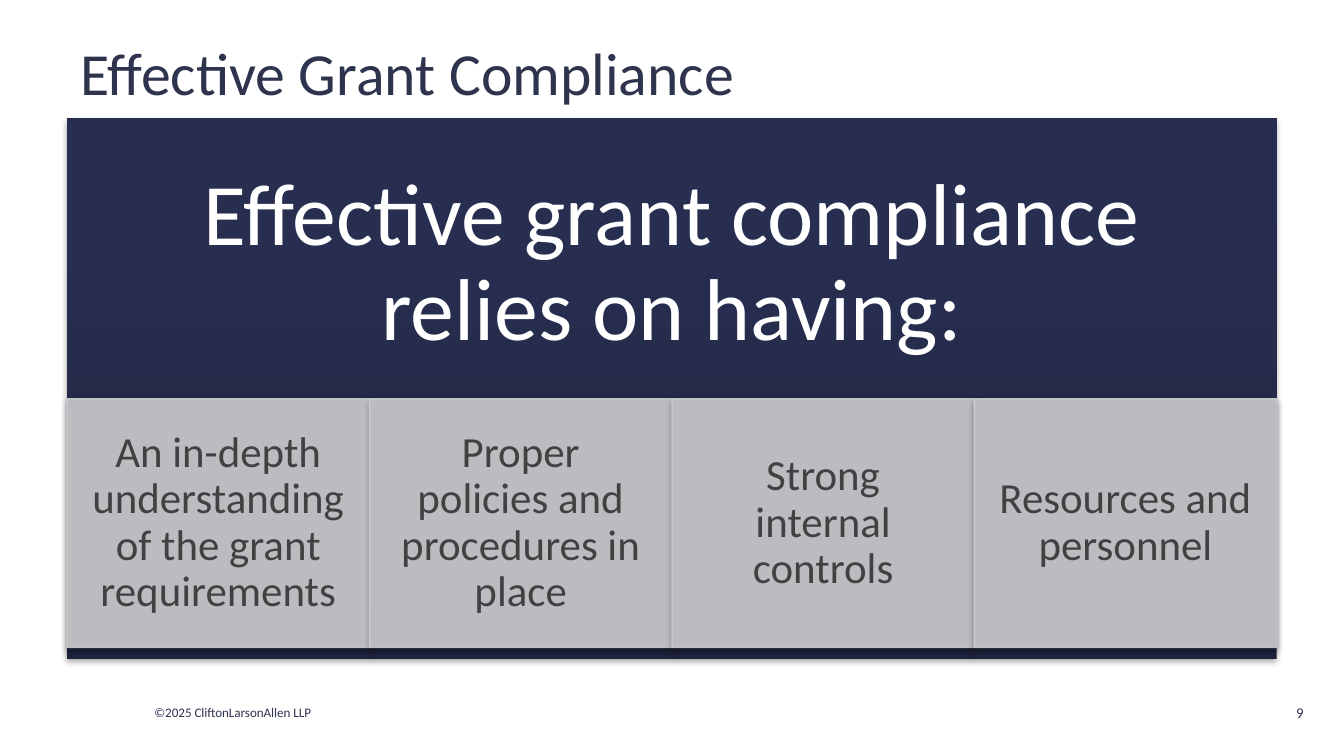
from dataclasses import dataclass
from typing import Optional

from lxml.etree import SubElement
from pptx import Presentation
from pptx.dml.color import RGBColor
from pptx.enum.shapes import MSO_SHAPE
from pptx.enum.text import MSO_ANCHOR, PP_ALIGN
from pptx.oxml.ns import qn
from pptx.util import Cm, Pt


@dataclass(frozen=True)
class Theme:
    font: str = "Calibri"
    navy: str = "2E334E"
    white: str = "FFFFFF"
    dark: str = "414142"
    tile: str = "CDCED0"
    shadow: str = "000000"
    panel_stops: tuple = ((0, "1F243E"), (80, "282E50"), (100, "272E51"))
    tile_alpha: int = 90
    shadow_alpha: int = 35
    title: int = 32
    heading: int = 47
    body: int = 23
    footer: int = 7
    number: int = 8


@dataclass(frozen=True)
class Box:
    left: float
    top: float
    width: float
    height: float

    def emu(self) -> tuple:
        return tuple(Cm(v) for v in (self.left, self.top, self.width, self.height))


@dataclass(frozen=True)
class Label:
    text: str
    size: int
    color: str
    align: PP_ALIGN = PP_ALIGN.LEFT
    spacing: Optional[float] = None
    inset: tuple = (0.25, 0.13)


THEME = Theme()
PANEL = Box(1.27, 2.24, 22.86, 10.21)
HEADING = Box(PANEL.left, PANEL.top, PANEL.width, 5.51)
TILE_TOP, TILE_HEIGHT = 7.54, 4.7
REQUIREMENTS = (
    "An in-depth understanding of the grant requirements",
    "Proper policies and procedures in place",
    "Strong internal controls",
    "Resources and personnel",
)
TEXTS = (
    (Box(2.67, 13.18, 3.84, 0.56),
     Label("©2025 CliftonLarsonAllen LLP", THEME.footer, THEME.navy)),
    (Box(1.27, 0.41, 22.86, 1.9),
     Label("Effective Grant Compliance", THEME.title, THEME.navy)),
    (HEADING,
     Label("Effective grant compliance relies on having:", THEME.heading,
           THEME.white, PP_ALIGN.CENTER, 0.9, (0.94, 0.94))),
    (Box(23.8, 12.98, 1.09, 0.97),
     Label("9", THEME.number, THEME.navy, PP_ALIGN.RIGHT)),
)


def write(sp, label: Label) -> None:
    tf = sp.text_frame
    tf.word_wrap = True
    tf.vertical_anchor = MSO_ANCHOR.MIDDLE
    tf.margin_left = tf.margin_right = Cm(label.inset[0])
    tf.margin_top = tf.margin_bottom = Cm(label.inset[1])
    tf.text = label.text
    p = tf.paragraphs[0]
    p.alignment = label.align
    if label.spacing:
        p.line_spacing = label.spacing
    font = p.runs[0].font
    font.name, font.size = THEME.font, Pt(label.size)
    font.color.rgb = RGBColor.from_string(label.color)


def add_color(parent, color: str, alpha: int = 100) -> None:
    clr = SubElement(parent, qn("a:srgbClr"), val=color)
    if alpha < 100:
        SubElement(clr, qn("a:alpha"), val=str(alpha * 1000))


def add_rect(s, box: Box):
    sp = s.shapes.add_shape(MSO_SHAPE.RECTANGLE, *box.emu())
    sp.shadow.inherit = False
    effects = sp._element.spPr.find(qn("a:effectLst"))
    shadow = SubElement(effects, qn("a:outerShdw"), blurRad=str(Pt(3.1)),
                        dist=str(Pt(1.8)), dir="5400000", rotWithShape="0")
    add_color(shadow, THEME.shadow, THEME.shadow_alpha)
    return sp


def add_panel(s) -> None:
    sp = add_rect(s, PANEL)
    sp.line.fill.background()
    sp.fill.gradient()
    sp.fill.gradient_angle = 90
    stops = sp._element.spPr.find(f".//{qn('a:gsLst')}")
    for gs in list(stops):
        stops.remove(gs)
    for pos, color in THEME.panel_stops:
        add_color(SubElement(stops, qn("a:gs"), pos=str(pos * 1000)), color)


def add_tile(s, box: Box, text: str) -> None:
    sp = add_rect(s, box)
    sp.line.width = Pt(0.75)
    for fill in (sp.fill, sp.line.fill):
        fill.solid()
        fill.fore_color.rgb = RGBColor.from_string(THEME.tile)
    for clr in sp._element.spPr.findall(f".//{qn('a:solidFill')}/{qn('a:srgbClr')}"):
        SubElement(clr, qn("a:alpha"), val=str(THEME.tile_alpha * 1000))
    write(sp, Label(text, THEME.body, THEME.dark, PP_ALIGN.CENTER, 0.9, (0.46, 0.08)))


def main() -> None:
    """Build the grant compliance slide."""
    prs = Presentation()
    prs.slide_width, prs.slide_height = Cm(25.4), Cm(14.29)
    s = prs.slides.add_slide(prs.slide_layouts[6])
    add_panel(s)
    width = PANEL.width / len(REQUIREMENTS)
    for i, text in enumerate(REQUIREMENTS):
        add_tile(s, Box(PANEL.left + i * width, TILE_TOP, width, TILE_HEIGHT), text)
    for box, label in TEXTS:
        write(s.shapes.add_textbox(*box.emu()), label)
    prs.save("out.pptx")


if __name__ == "__main__":
    main()
